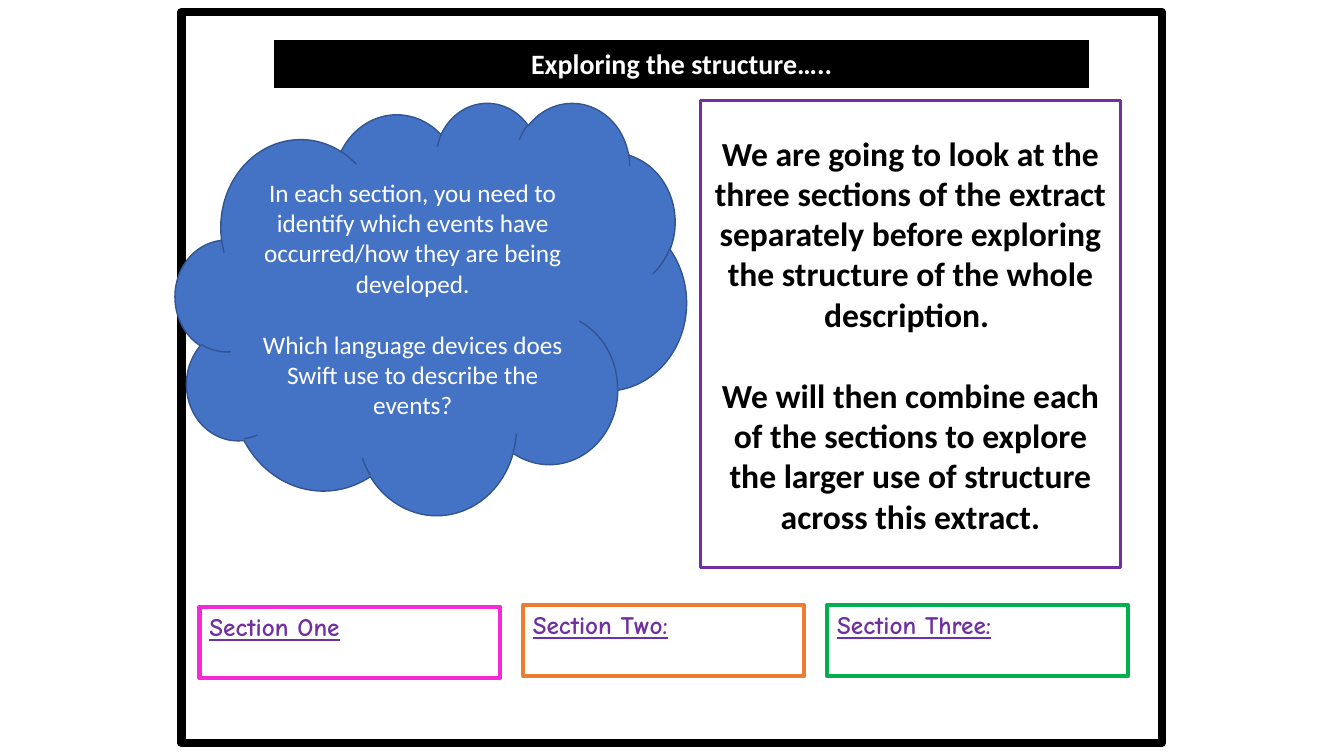
from dataclasses import dataclass
from typing import Optional

from pptx import Presentation
from pptx import util as u
from pptx.dml.color import RGBColor
from pptx.enum import shapes, text

BLACK = RGBColor(0x00, 0x00, 0x00)
WHITE = RGBColor(0xFF, 0xFF, 0xFF)
PURPLE = RGBColor(0x70, 0x30, 0xA0)
PINK = RGBColor(0xF5, 0x29, 0xD8)
ORANGE = RGBColor(0xED, 0x7D, 0x31)
GREEN = RGBColor(0x00, 0xB0, 0x50)
BLUE = RGBColor(0x44, 0x72, 0xC4)
DARK_BLUE = RGBColor(0x32, 0x54, 0x91)

RECTANGLE = shapes.MSO_SHAPE.RECTANGLE
CLOUD = shapes.MSO_SHAPE.CLOUD


@dataclass(frozen=True)
class Box:
    """Place in centimetres, line width in points."""
    left: float
    top: float
    width: float
    height: float
    line: RGBColor
    line_width: float
    fill: Optional[RGBColor] = WHITE


@dataclass(frozen=True)
class Section:
    label: str
    box: Box


FRAME = Box(4.57, 0.3, 24.71, 18.42, BLACK, 6, None)
TITLE = Box(6.88, 0.97, 20.6, 1.27, WHITE, 1.5, BLACK)
PLAN = Box(17.65, 2.54, 10.59, 11.76, PURPLE, 2.25)
TASK = Box(4.42, 2.57, 12.88, 10.39, DARK_BLUE, 1, BLUE)
SECTIONS = [
    Section("Section One", Box(5.03, 15.29, 7.57, 1.8, PINK, 3)),
    Section("Section Two:", Box(13.18, 15.24, 7.09, 1.8, ORANGE, 3)),
    Section("Section Three:", Box(20.85, 15.24, 7.57, 1.8, GREEN, 3)),
]

PLAN_TEXT = [
    "We are going to look at the three sections of the extract separately "
    "before exploring the structure of the whole description. ",
    "We will then combine each of the sections to explore the larger use of "
    "structure across this extract.",
]
TASK_TEXT = [
    "In each section, you need to identify which events have occurred/how "
    "they are being developed.",
    "Which language devices does Swift use to describe the events?",
]


def style_box(shape, box: Box) -> None:
    shape.left, shape.top = u.Cm(box.left), u.Cm(box.top)
    shape.width, shape.height = u.Cm(box.width), u.Cm(box.height)
    if box.fill is None:
        shape.fill.background()
    else:
        shape.fill.solid()
        shape.fill.fore_color.rgb = box.fill
    shape.line.color.rgb = box.line
    shape.line.width = u.Pt(box.line_width)


def add_box(slide, box: Box, kind=RECTANGLE):
    shape = slide.shapes.add_shape(kind, 0, 0, 0, 0)
    shape.shadow.inherit = False
    style_box(shape, box)
    return shape


def write(shape, paragraphs: list[str], *, size: float, color: RGBColor,
          font: str = "Calibri", bold: bool = False, underline: bool = False,
          align=text.PP_ALIGN.CENTER, anchor=text.MSO_ANCHOR.MIDDLE,
          gap: float = 0) -> None:
    frame = shape.text_frame
    frame.word_wrap = True
    frame.auto_size = text.MSO_AUTO_SIZE.NONE
    frame.vertical_anchor = anchor
    for index, words in enumerate(paragraphs):
        paragraph = frame.add_paragraph() if index else frame.paragraphs[0]
        paragraph.alignment = align
        paragraph.space_before = u.Pt(gap if index else 0)
        run = paragraph.add_run()
        run.text = words
        run.font.name = font
        run.font.size = u.Pt(size)
        run.font.bold = bold
        run.font.underline = underline
        run.font.color.rgb = color


def main() -> None:
    presentation = Presentation()
    presentation.slide_width = u.Cm(33.87)
    presentation.slide_height = u.Cm(19.05)
    slide = presentation.slides.add_slide(presentation.slide_layouts[5])

    # Title bar
    title = slide.shapes.title
    style_box(title, TITLE)
    write(title, ["Exploring the structure….."], size=20, color=WHITE, bold=True)

    # Page frame
    add_box(slide, FRAME)

    # Lesson plan
    write(add_box(slide, PLAN), PLAN_TEXT, size=24, color=BLACK, bold=True, gap=29)

    # Section boxes
    for section in SECTIONS:
        write(add_box(slide, section.box), [section.label], size=18, color=PURPLE,
              font="Comic Neue", bold=True, underline=True,
              align=text.PP_ALIGN.LEFT, anchor=text.MSO_ANCHOR.TOP)

    # Task cloud
    write(add_box(slide, TASK, CLOUD), TASK_TEXT, size=18, color=WHITE, gap=22)

    presentation.save("out.pptx")


if __name__ == "__main__":
    main()
